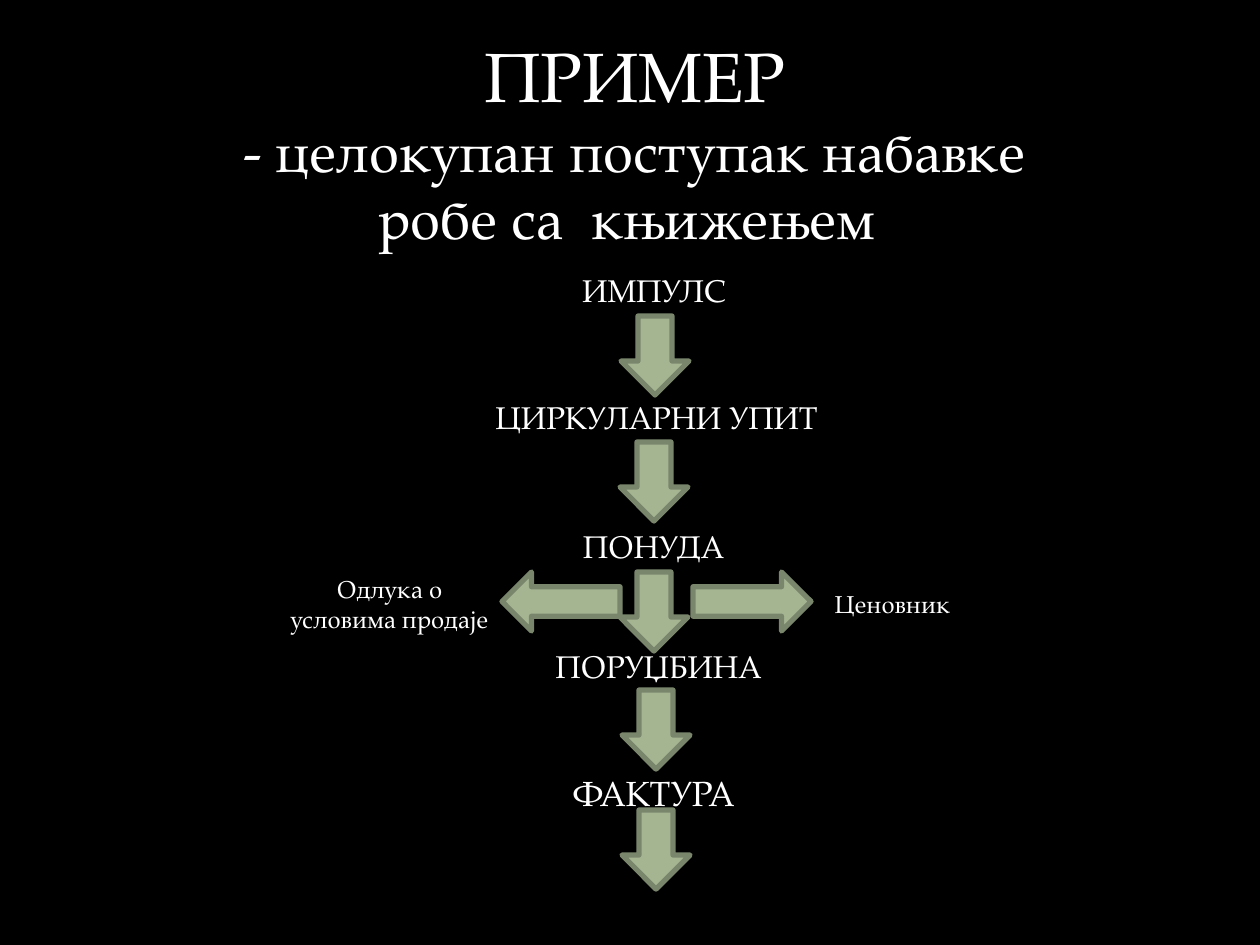
from pptx import Presentation
from pptx.dml.color import RGBColor
from pptx.enum.shapes import MSO_SHAPE
from pptx.enum.text import MSO_AUTO_SIZE, PP_ALIGN
from pptx.util import Pt

SCALE = 914400 / 126
FONT = "TeX Gyre Pagella"
COLORS = {"back": "000000", "text": "FFFFFF", "fill": "A5B592", "line": "7A866C"}

DOWN = (68, 79)
SIDE = (118, 59)

# Left, top of each step arrow
STEPS = [(621, 316), (620, 442), (620, 572), (622, 690), (622, 810)]

# Box, then lines of text with their point size
LABELS = [
    ((213, 26, 843, 233), [("ПРИМЕР", 40),
                           ("- целокупан поступак набавке робе са  књижењем ", 32)]),
    ((485, 265, 338, 50), [("ИМПУЛС", 18)]),
    ((478, 392, 357, 50), [("ЦИРКУЛАРНИ УПИТ", 18)]),
    ((476, 521, 355, 50), [("ПОНУДА", 18)]),
    ((480, 641, 357, 50), [("ПОРУЏБИНА", 18)]),
    ((535, 765, 238, 55), [("ФАКТУРА", 20)]),
    ((276, 568, 227, 72), [("Одлука о условима продаје", 14)]),
    ((789, 583, 207, 43), [("Ценовник", 14)]),
]


def px(*vals):
    return [round(val * SCALE) for val in vals]


def color(name):
    return RGBColor.from_string(COLORS[name])


def style(item, **values):
    for name, val in values.items():
        setattr(item, name, val)


def arrow(slide, kind, spot, size):
    shape = slide.shapes.add_shape(kind, *px(*spot, *size))
    shape.shadow.inherit = False
    shape.fill.solid()
    shape.fill.fore_color.rgb = color("fill")
    shape.line.color.rgb = color("line")
    shape.line.width = Pt(3)


def label(slide, box, lines):
    frame = slide.shapes.add_textbox(*px(*box)).text_frame
    style(frame, word_wrap=True, auto_size=MSO_AUTO_SIZE.SHAPE_TO_FIT_TEXT)
    for num, (text, size) in enumerate(lines):
        para = frame.add_paragraph() if num else frame.paragraphs[0]
        para.alignment = PP_ALIGN.CENTER
        run = para.add_run()
        run.text = text
        style(run.font, name=FONT, size=Pt(size))
        run.font.color.rgb = color("text")


def main():
    deck = Presentation()
    deck.slide_width, deck.slide_height = px(1260, 945)
    slide = deck.slides.add_slide(deck.slide_layouts[6])
    slide.background.fill.solid()
    slide.background.fill.fore_color.rgb = color("back")

    for spot in STEPS:
        arrow(slide, MSO_SHAPE.DOWN_ARROW, spot, DOWN)
    arrow(slide, MSO_SHAPE.RIGHT_ARROW, (693, 572), SIDE)
    arrow(slide, MSO_SHAPE.LEFT_ARROW, (502, 572), SIDE)
    for box, lines in LABELS:
        label(slide, box, lines)

    deck.save("out.pptx")


if __name__ == "__main__":
    main()
